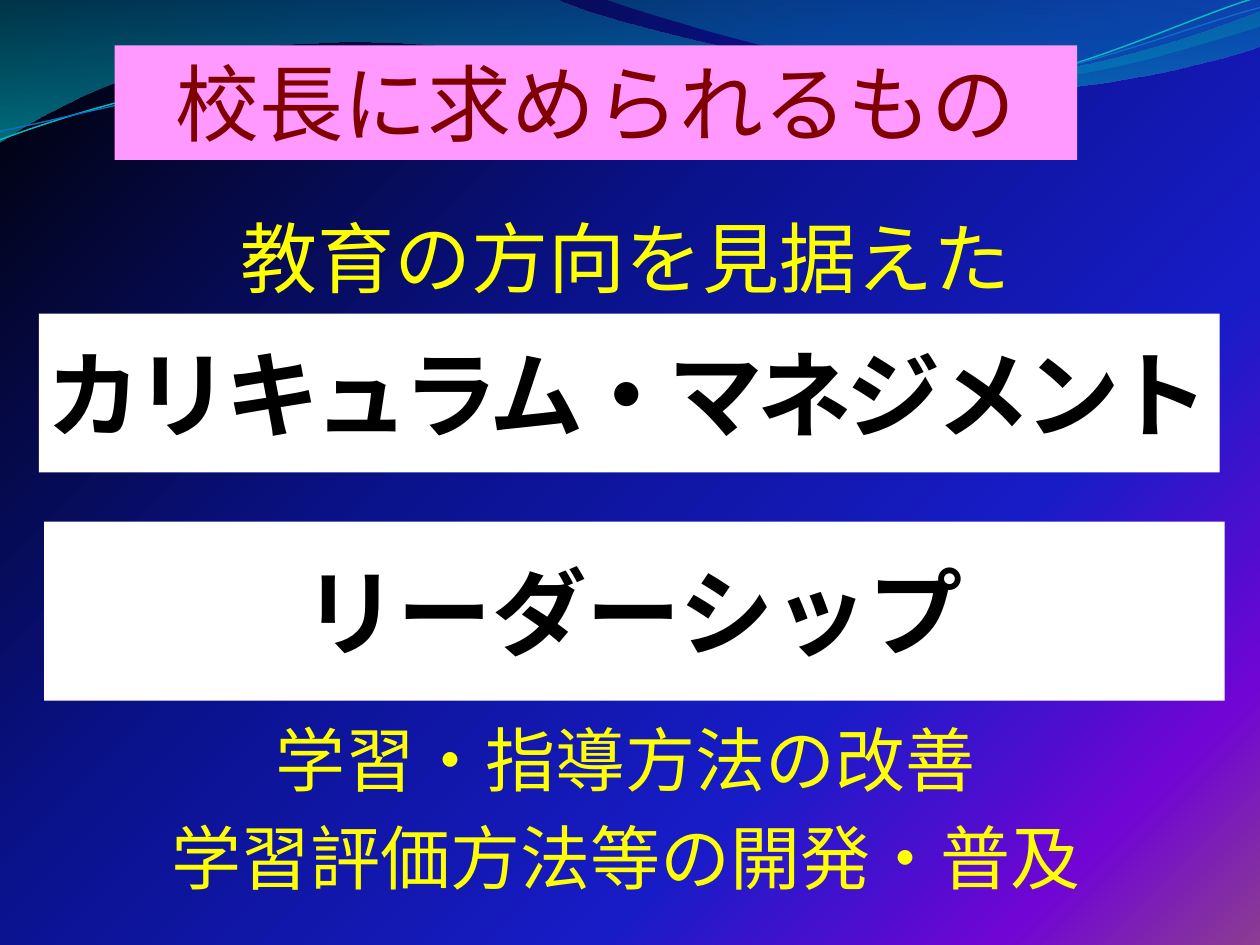
from dataclasses import dataclass

from lxml import etree
from pptx import Presentation
from pptx import util as u
from pptx.dml.color import RGBColor
from pptx.enum import shapes, text
from pptx.oxml.ns import qn

COLUMNS, ROWS = 10, 7.5  # square grid cells


@dataclass(frozen=True)
class Theme:
    latin: str = "Arial"
    japanese: str = "Noto Sans CJK JP"
    paper: str = "FFFFFF"
    ink: str = "000000"
    accent: str = "FFFF00"
    banner: str = "FF99FF"
    banner_ink: str = "800000"
    key: int = 54
    heading: int = 48
    lead: int = 44
    body: int = 40
    # Gradient stops: position, colour, opacity (percent)
    night: tuple = ((0, "000000", 100), (40, "0A128C", 100), (70, "181CC7", 100),
                    (88, "7005D4", 100), (100, "8C3D91", 100))
    wide_wave: tuple = ((0, "0074A1", 45), (100, "00C6CF", 55))
    small_wave: tuple = ((0, "00A1A9", 30), (80, "008BBF", 45))
    strands: tuple = (("0AB8BF", 0.85), ("0F6FC6", 0.75))


def set_gradient(fill, element, stops, angle):
    """Fill with any number of stops; the angle runs clockwise."""
    fill.gradient()
    fill.gradient_angle = 360 - angle
    stop_list = next(element.iter(qn("a:gsLst")))
    for stop in list(stop_list):
        stop_list.remove(stop)
    for position, colour, opacity in stops:
        stop = etree.SubElement(stop_list, qn("a:gs"), pos=str(position * 1000))
        tint = etree.SubElement(stop, qn("a:srgbClr"), val=colour)
        if opacity < 100:
            etree.SubElement(tint, qn("a:alpha"), val=str(opacity * 1000))


def write(frame, lines, *, size, colour, font, japanese, bold=False,
          spacing=0, leading=None, before=0, right=0):
    """Write centred lines, one paragraph each."""
    for index, line in enumerate(lines):
        para = frame.paragraphs[0] if index == 0 else frame.add_paragraph()
        para.alignment = text.PP_ALIGN.CENTER
        if right:
            para._p.get_or_add_pPr().set("marR", str(u.Inches(right)))
        if leading:
            para.line_spacing = u.Pt(round(size * leading, 1))
        if index:
            para.space_before = u.Pt(before)
        span = para.add_run()
        span.text = line
        span.font.size = u.Pt(size)
        span.font.bold = bold
        span.font.name = font
        span.font.color.rgb = RGBColor.from_string(colour)
        properties = span.font._element
        etree.SubElement(properties, qn("a:ea"), typeface=japanese)
        if spacing:
            properties.set("spc", str(spacing * 100))


def bend(shape, segments):
    """Join each run of three line points into one cubic curve."""
    lines = iter(list(shape.element.iter(qn("a:lnTo"))))
    for segment in segments:
        group = [next(lines) for _ in range(len(segment) // 2)]
        if len(group) == 3:
            curve = etree.Element(qn("a:cubicBezTo"))
            group[0].addprevious(curve)
            for line in group:
                curve.append(line[0])
                line.getparent().remove(line)


class Slide:
    def __init__(self, deck, theme):
        self.theme = theme
        self.page = deck.slides.add_slide(deck.slide_layouts[6])
        self.cell_x = deck.slide_width / COLUMNS
        self.cell_y = deck.slide_height / ROWS

    def place(self, column, row):
        return round(column * self.cell_x), round(row * self.cell_y)

    def background(self, stops, angle):
        set_gradient(self.page.background.fill, self.page.element, stops, angle)

    def outline(self, start, segments, closed):
        """Segments hold one point for a line, three for a cubic curve."""
        builder = self.page.shapes.build_freeform(*self.place(*start))
        points = [self.place(*segment[i:i + 2])
                  for segment in segments for i in range(0, len(segment), 2)]
        builder.add_line_segments(points, close=closed)
        shape = builder.convert_to_shape()
        bend(shape, segments)
        shape.shadow.inherit = False
        return shape

    def wave(self, start, segments, stops):
        shape = self.outline(start, segments, True)
        set_gradient(shape.fill, shape.element, stops, 90)
        shape.line.fill.background()

    def strand(self, start, segments, colour, width):
        shape = self.outline(start, segments, False)
        shape.fill.background()
        shape.line.color.rgb = RGBColor.from_string(colour)
        shape.line.width = u.Pt(width)

    def panel(self, at, lines, fill, *, anchor=text.MSO_ANCHOR.MIDDLE,
              insets=(0, 0, 0.02, 0), **style):
        box = self.page.shapes.add_shape(shapes.MSO_SHAPE.RECTANGLE,
                                         *self.place(*at[:2]), *self.place(*at[2:]))
        box.shadow.inherit = False
        box.fill.solid()
        box.fill.fore_color.rgb = RGBColor.from_string(fill)
        box.line.fill.background()
        self.fill_text(box, lines, anchor, insets, style)

    def label(self, at, lines, **style):
        box = self.page.shapes.add_textbox(*self.place(*at[:2]), *self.place(*at[2:]))
        self.fill_text(box, lines, text.MSO_ANCHOR.TOP, (0, 0.05, 0.02, 0.05), style)

    def fill_text(self, box, lines, anchor, insets, style):
        frame = box.text_frame
        frame.word_wrap = True
        frame.vertical_anchor = anchor
        (frame.margin_left, frame.margin_top,
         frame.margin_right, frame.margin_bottom) = map(u.Inches, insets)
        write(frame, lines, japanese=self.theme.japanese,
              **{"font": self.theme.japanese, **style})


def main():
    theme = Theme()
    deck = Presentation()
    deck.slide_width, deck.slide_height = u.Inches(10), u.Inches(7.5)
    slide = Slide(deck, theme)

    # Backdrop with waves and thin strands
    slide.background(theme.night, 45)
    slide.wave((0, 0), [(4.4, -0.01), (4.76, 0.17, 6.64, 0.63, 7.58, 0.63),
                        (8.53, 0.63, 9.58, 0.26, 10, 0.09), (10.01, 0.36),
                        (9.83, 0.44, 8.7, 0.76, 7.46, 0.75),
                        (6.22, 0.75, 3.82, 0.28, 2.57, 0.34),
                        (1.29, 0.36, 0.46, 0.83, -0.01, 1.13)], theme.wide_wave)
    slide.wave((4.79, -0.01), [(5.09, 0.11, 6.82, 0.62, 7.69, 0.65),
                               (8.56, 0.69, 9.61, 0.32, 10, 0.21), (10, 0)],
               theme.small_wave)
    strands = (
        ((0, 1.11), [(0.48, 0.93, 1.58, 0.57, 2.77, 0.52),
                     (3.95, 0.47, 5.93, 0.89, 7.13, 0.8),
                     (8.33, 0.71, 9.38, 0.15, 9.98, -0.02)]),
        ((0, 1.04), [(0.47, 0.96, 1.64, 0.61, 2.83, 0.56),
                     (4.03, 0.51, 5.97, 0.84, 7.17, 0.75),
                     (8.36, 0.67, 9.41, 0.21, 10, 0.06)]),
    )
    for (start, segments), stroke in zip(strands, theme.strands):
        slide.strand(start, segments, *stroke)

    # First key term
    key = dict(size=theme.key, colour=theme.ink, bold=True)
    slide.panel((0.31, 2.49, 9.37, 1.26), ["カリキュラム・マネジメント"],
                theme.paper, spacing=-3, **key)

    # Closing lines
    plain = dict(colour=theme.accent, leading=1.2, right=0.05)
    slide.label((0.71, 5.64, 8.58, 0.79),
                ["学習・指導方法の改善", "学習評価方法等の開発・普及"],
                size=theme.body, before=8, **plain)

    # Heading
    slide.panel((0.91, 0.36, 7.64, 0.91), ["校長に求められるもの"], theme.banner,
                anchor=text.MSO_ANCHOR.TOP, insets=(0.1, 0.05, 0.1, 0.05),
                size=theme.heading, colour=theme.banner_ink, font=theme.latin,
                leading=1.2)

    # Second key term and lead
    slide.panel((0.35, 4.14, 9.37, 1.42), ["リーダーシップ"], theme.paper, **key)
    slide.label((0.51, 1.62, 8.98, 0.94), ["教育の方向を見据えた"],
                size=theme.lead, **plain)

    deck.save("out.pptx")


if __name__ == "__main__":
    main()
